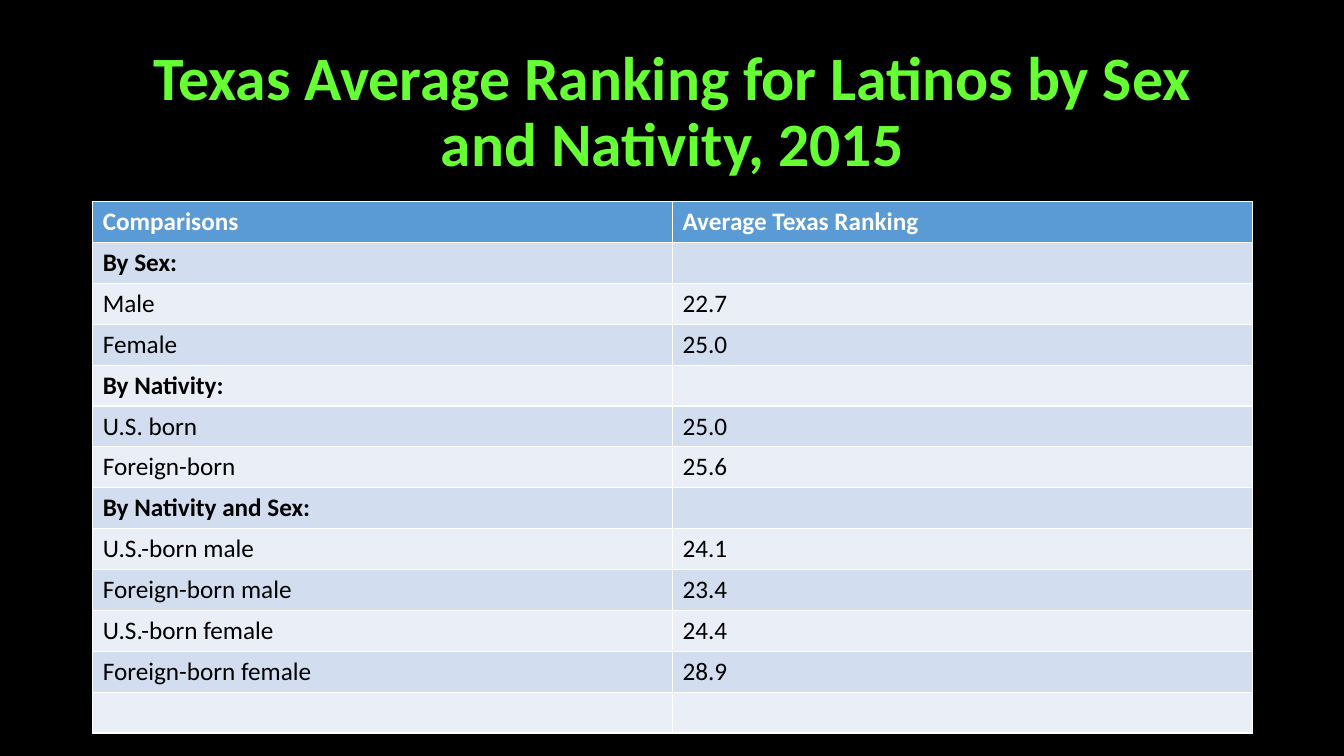
from pptx import Presentation
from pptx.dml.color import RGBColor
from pptx.enum import text
from pptx.util import Inches, Pt

TITLE = "Texas Average Ranking for Latinos by Sex and Nativity, 2015"
HEAD = ("Comparisons", "Average Texas Ranking")
GROUPS = [
    ("By Sex:", [("Male", "22.7"), ("Female", "25.0")]),
    ("By Nativity:", [("U.S. born", "25.0"), ("Foreign-born", "25.6")]),
    ("By Nativity and Sex:", [
        ("U.S.-born male", "24.1"),
        ("Foreign-born male", "23.4"),
        ("U.S.-born female", "24.4"),
        ("Foreign-born female", "28.9"),
    ]),
]
COLORS = {"back": "000000", "title": "66FF33", "head": "5B9BD5",
          "odd": "D2DEEF", "even": "EAEFF7", "white": "FFFFFF", "ink": "000000"}
FONT = "Calibri"
LEFT, WIDTH = Inches(0.92), Inches(11.5)


def color(name):
    return RGBColor.from_string(COLORS[name])


def style(para, size, tint, bold):
    font = para.font
    font.name, font.size, font.bold = FONT, Pt(size), bold
    font.color.rgb = color(tint)


# Slide and background
deck = Presentation()
deck.slide_width, deck.slide_height = Inches(13.33), Inches(7.5)
slide = deck.slides.add_slide(deck.slide_layouts[5])
slide.background.fill.solid()
slide.background.fill.fore_color.rgb = color("back")

# Title
title = slide.shapes.title
title.left, title.top, title.width, title.height = LEFT, Inches(0.4), WIDTH, Inches(1.45)
frame = title.text_frame
frame.text = TITLE
frame.word_wrap = True
frame.auto_size = text.MSO_AUTO_SIZE.NONE
frame.vertical_anchor = text.MSO_ANCHOR.MIDDLE
para = frame.paragraphs[0]
para.alignment = text.PP_ALIGN.CENTER
para.line_spacing = 0.9
style(para, 44, "title", True)

# Table rows: each group has a bold label row, and the last row is empty
rows = [(HEAD, True)]
for label, items in GROUPS:
    rows.append(((label, ""), True))
    rows += [(item, False) for item in items]
rows.append((("", ""), False))

# Table, with white rules from its default style
table = slide.shapes.add_table(len(rows), len(HEAD), LEFT, Inches(2),
                               WIDTH, Inches(5.27)).table
for r, (words, bold) in enumerate(rows):
    fill = "head" if r == 0 else "odd" if r % 2 else "even"
    for c, word in enumerate(words):
        cell = table.cell(r, c)
        cell.text = word
        cell.fill.solid()
        cell.fill.fore_color.rgb = color(fill)
        style(cell.text_frame.paragraphs[0], 18, "ink" if r else "white", bold)

deck.save("out.pptx")
